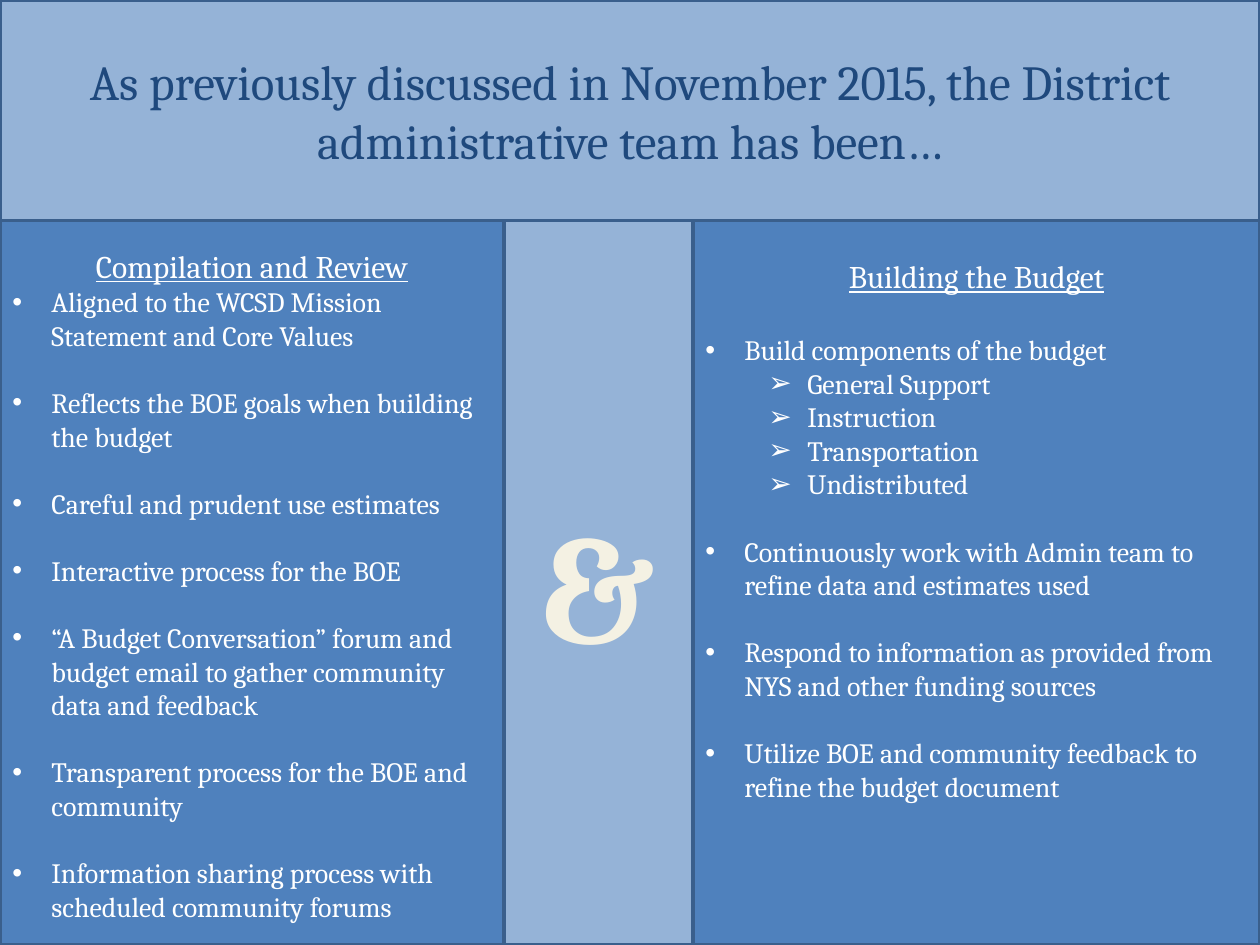
from dataclasses import dataclass

from lxml.etree import SubElement
from pptx import Presentation
from pptx.dml.color import RGBColor
from pptx.enum.shapes import MSO_SHAPE
from pptx.enum.text import MSO_ANCHOR, PP_ALIGN
from pptx.oxml.ns import qn
from pptx.util import Inches, Pt


@dataclass(frozen=True)
class Theme:
    font: str = "Cambria"
    panel: str = "4F81BD"
    band: str = "95B3D7"
    border: str = "3A5F8C"
    title: str = "1F497D"
    light: str = "FFFFFF"
    cream: str = "F4F1E3"
    title_size: float = 28
    heading_size: float = 18
    body_size: float = 16
    symbol_size: float = 88
    line_height: float = 1.2


def write(paragraph, text, *, font, size, color, bold=False, underline=False,
          align=PP_ALIGN.LEFT, before=0):
    paragraph.alignment = align
    paragraph.space_before = Pt(before)
    run = paragraph.add_run()
    run.text = text
    run.font.name = font
    run.font.size = Pt(size)
    run.font.bold = bold
    run.font.underline = underline
    run.font.color.rgb = RGBColor.from_string(color)


class SlideBuilder:
    COLUMNS, ROWS = 20, 30

    def __init__(self, deck, theme):
        self.theme = theme
        self.slide = deck.slides.add_slide(deck.slide_layouts[6])
        self.column = deck.slide_width // self.COLUMNS
        self.row = deck.slide_height // self.ROWS

    def block(self, column, row, columns, rows, fill):
        block = self.slide.shapes.add_shape(
            MSO_SHAPE.RECTANGLE, column * self.column, row * self.row,
            columns * self.column, rows * self.row)
        block.shadow.inherit = False
        block.fill.solid()
        block.fill.fore_color.rgb = RGBColor.from_string(fill)
        block.line.color.rgb = RGBColor.from_string(self.theme.border)
        block.line.width = Pt(2)
        block.text_frame.word_wrap = True
        block.text_frame.vertical_anchor = MSO_ANCHOR.MIDDLE
        return block.text_frame

    def label(self, *cells, text, fill, **style):
        frame = self.block(*cells, fill)
        write(frame.paragraphs[0], text, font=self.theme.font,
              align=PP_ALIGN.CENTER, **style)

    def bullet(self, frame, text, level, before):
        theme = self.theme
        paragraph = frame.add_paragraph()
        paragraph.level = level
        write(paragraph, text, font=theme.font, size=theme.body_size,
              color=theme.light, before=before)
        properties = paragraph._p.get_or_add_pPr()
        properties.set("marL", str(Inches(0.31 + 0.5 * level)))
        properties.set("indent", str(Inches(-0.31)))
        SubElement(properties, qn("a:buFont"), typeface="Arial")
        SubElement(properties, qn("a:buChar"), char="•➢"[level])

    def panel(self, *cells, heading, points, inset, first_gap):
        theme = self.theme
        frame = self.block(*cells, theme.panel)
        frame.vertical_anchor = MSO_ANCHOR.TOP
        frame.margin_top = Inches(inset)
        write(frame.paragraphs[0], heading, font=theme.font,
              size=theme.heading_size, color=theme.light, underline=True,
              align=PP_ALIGN.CENTER)
        gap = first_gap
        for point, details in points:
            self.bullet(frame, point, 0, gap)
            for detail in details:
                self.bullet(frame, detail, 1, 0)
            gap = theme.body_size * theme.line_height


REVIEW = [
    ("Aligned to the WCSD Mission Statement and Core Values", []),
    ("Reflects the BOE goals when building the budget", []),
    ("Careful and prudent use estimates", []),
    ("Interactive process for the BOE", []),
    ("“A Budget Conversation” forum and budget email to gather community "
     "data and feedback", []),
    ("Transparent process for the BOE and community", []),
    ("Information sharing process with scheduled community forums", []),
]
BUILDING = [
    ("Build components of the budget",
     ["General Support", "Instruction", "Transportation", "Undistributed"]),
    ("Continuously work with Admin team to refine data and estimates used", []),
    ("Respond to information as provided from NYS and other funding sources", []),
    ("Utilize BOE and community feedback to refine the budget document", []),
]


def main():
    deck = Presentation()
    deck.slide_width, deck.slide_height = Inches(10), Inches(7.5)
    theme = Theme()
    page = SlideBuilder(deck, theme)
    page.panel(0, 7, 8, 23, heading="Compilation and Review", points=REVIEW,
               inset=0.21, first_gap=0)
    page.panel(11, 7, 9, 23, heading="Building the Budget", points=BUILDING,
               inset=0.29, first_gap=theme.heading_size * theme.line_height)
    page.label(0, 0, 20, 7, fill=theme.band, size=theme.title_size,
               color=theme.title,
               text="As previously discussed in November 2015, the District "
                    "administrative team has been…")
    page.label(8, 7, 3, 23, fill=theme.band, size=theme.symbol_size,
               color=theme.cream, bold=True, text="&")
    deck.save("out.pptx")


if __name__ == "__main__":
    main()
